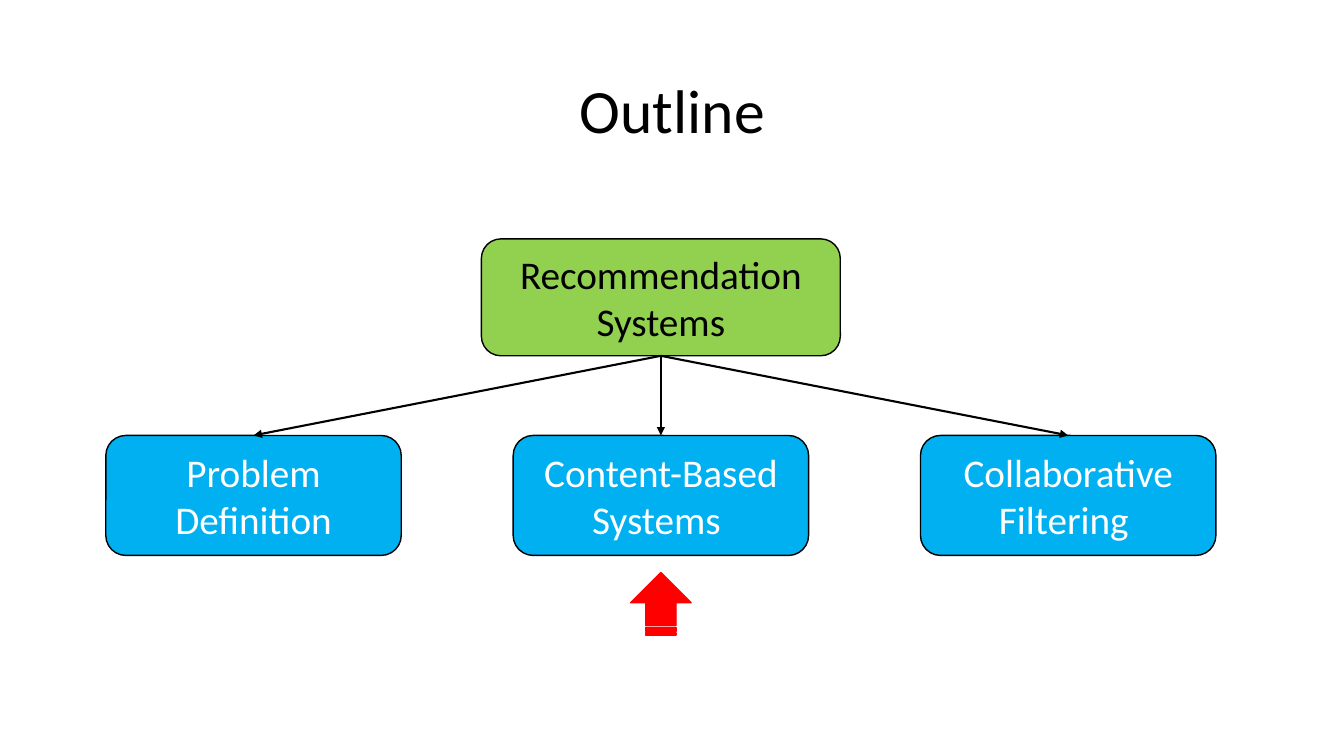
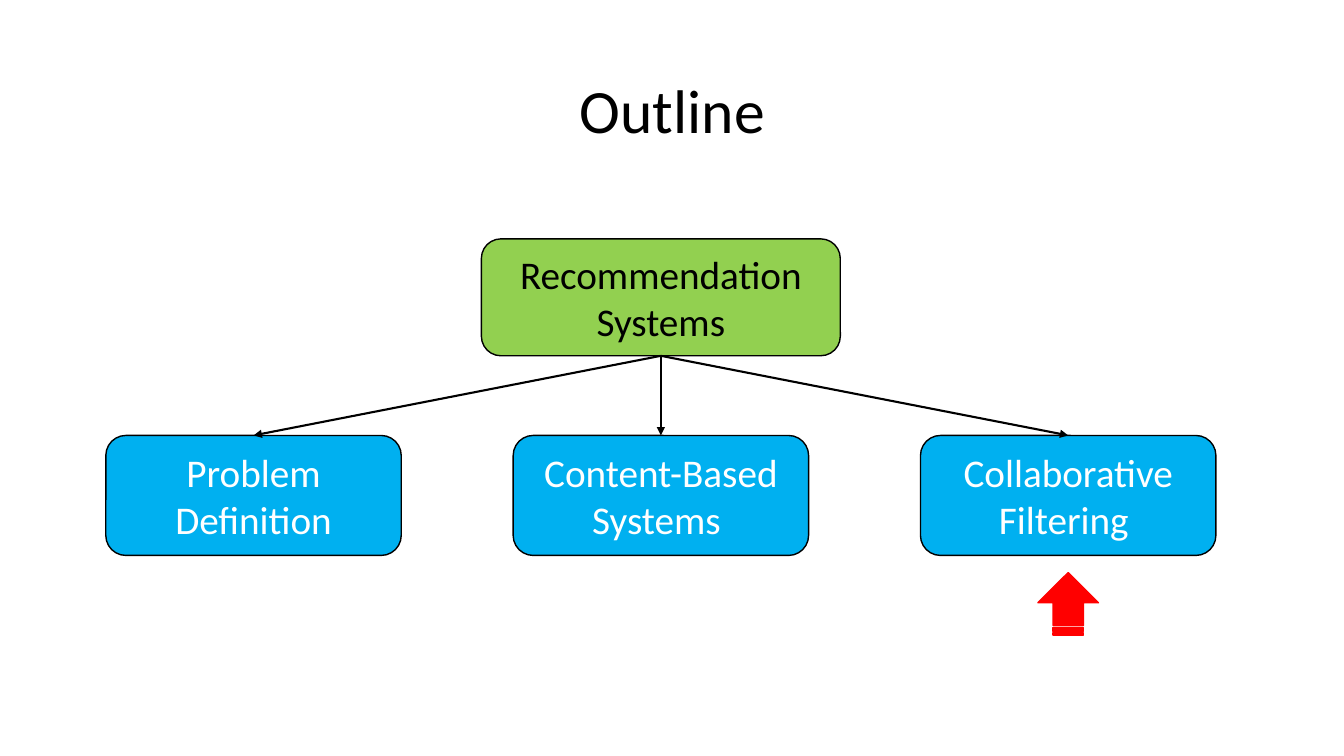
import pptx
import pptx.util
import pptx.dml.color
import pptx.enum.shapes
import pptx.enum.text
import pptx.oxml
import pptx.oxml.ns
import lxml.etree

Inches = pptx.util.Inches
Pt = pptx.util.Pt
RGBColor = pptx.dml.color.RGBColor
Shape = pptx.enum.shapes.MSO_SHAPE
qn = pptx.oxml.ns.qn

BLACK = RGBColor(0x00, 0x00, 0x00)
WHITE = RGBColor(0xFF, 0xFF, 0xFF)
GREEN = RGBColor(0x92, 0xD0, 0x50)
BLUE = RGBColor(0x00, 0xB0, 0xF0)
RED = RGBColor(0xFF, 0x00, 0x00)
FONT = "Calibri"

ROOT = "Recommendation Systems"
LEAVES = ["Problem Definition", "Content-Based Systems ", "Collaborative Filtering "]
PICKS = [1, 2]


def write(shape, text, size=28, color=BLACK, space=None):
    """Put centred text into a shape."""
    frame = shape.text_frame
    frame.word_wrap = True
    frame.vertical_anchor = pptx.enum.text.MSO_ANCHOR.MIDDLE
    para = frame.paragraphs[0]
    para.alignment = pptx.enum.text.PP_ALIGN.CENTER
    para.line_spacing = space
    run = para.add_run()
    run.text = text
    run.font.name = FONT
    run.font.size = Pt(size)
    run.font.color.rgb = color


def draw(slide, kind, left, top, width, height, fill, edge):
    """Add a filled, outlined shape, with lengths in inches."""
    shape = slide.shapes.add_shape(
        kind, Inches(left), Inches(top), Inches(width), Inches(height))
    shape.shadow.inherit = False
    shape.fill.solid()
    shape.fill.fore_color.rgb = fill
    shape.line.color.rgb = edge
    shape.line.width = Pt(1)
    return shape


def link(slide, root, leaf):
    """Join the bottom of the root to the top of a leaf with an arrow."""
    line = slide.shapes.add_connector(
        pptx.enum.shapes.MSO_CONNECTOR.STRAIGHT, 0, 0, 0, 0)
    line.begin_connect(root, 2)
    line.end_connect(leaf, 0)
    line.line.color.rgb = BLACK
    line.line.width = Pt(1.5)
    props = line._element.spPr
    lxml.etree.SubElement(props.find(qn("a:ln")), qn("a:tailEnd"), type="triangle")
    lxml.etree.SubElement(props, qn("a:effectLst"))


def tree(slide, left, top, width, height, pick):
    """Draw the topic tree in its box and point at the picked leaf."""
    root_w, root_h = 3.56, 1.16
    leaf_w, leaf_h = 2.93, 1.19
    root = draw(slide, Shape.ROUNDED_RECTANGLE, left + (width - root_w) / 2, top,
                root_w, root_h, GREEN, BLACK)
    write(root, ROOT)
    step = (width - leaf_w) / (len(LEAVES) - 1)
    base = top + height
    for i, name in enumerate(LEAVES):
        leaf = draw(slide, Shape.ROUNDED_RECTANGLE, left + i * step, base - leaf_h,
                    leaf_w, leaf_h, BLUE, BLACK)
        write(leaf, name, color=WHITE)
        link(slide, root, leaf)
    mark(slide, left + pick * step + leaf_w / 2, base + 0.18)


def mark(slide, mid, top):
    """Draw the red pointer centred below a leaf."""
    width, height = 0.62, 0.6
    arrow = draw(slide, Shape.STRIPED_RIGHT_ARROW, mid - width / 2, top,
                 width, height, RED, RED)
    arrow.rotation = 270


def outline(deck, layout, pick):
    """Add an outline slide with one topic marked."""
    slide = deck.slides.add_slide(layout)
    write(slide.shapes.title, "Outline", size=44, space=0.9)
    tree(slide, 1.05, 2.37, 11.01, 3.14, pick)


def main():
    """Build and save the deck."""
    deck = pptx.Presentation()
    deck.slide_width = Inches(13.33)
    deck.slide_height = Inches(7.5)
    layout = deck.slide_layouts[5]
    title = layout.placeholders[0]
    title.left, title.top = Inches(0.92), Inches(0.4)
    title.width, title.height = Inches(11.5), Inches(1.45)
    for pick in PICKS:
        outline(deck, layout, pick)
    deck.save("out.pptx")


if __name__ == "__main__":
    main()
